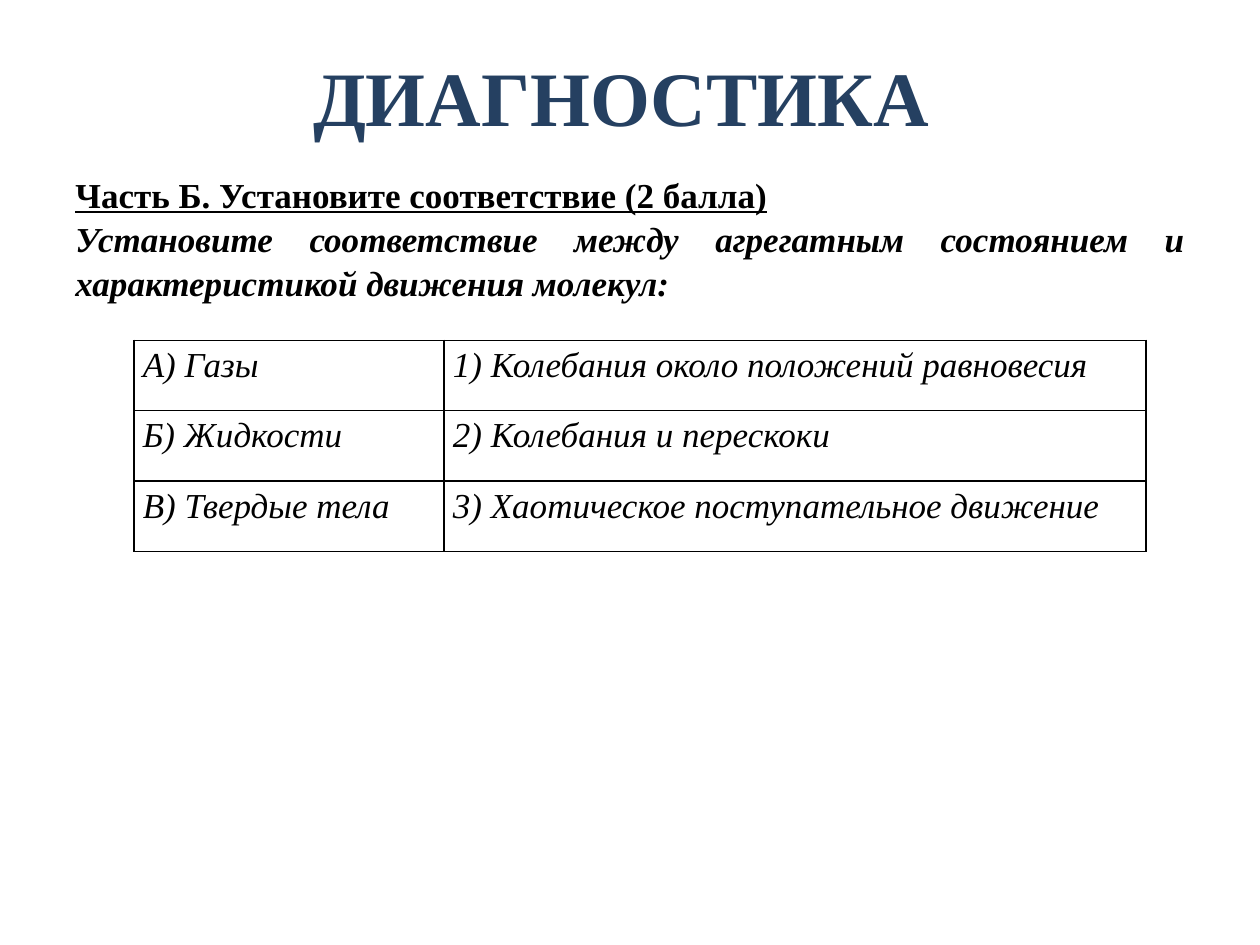
from lxml import etree
from pptx import Presentation
from pptx.dml.color import RGBColor
from pptx.enum import text
from pptx.oxml.ns import qn
from pptx.util import Cm, Pt

TITLE = "ДИАГНОСТИКА"
TASK = "Часть Б. Установите соответствие (2 балла)"
QUESTION = ("Установите соответствие между агрегатным состоянием "
            "и характеристикой движения молекул:")
MATCHES = [
    ("А) Газы", "1) Колебания около положений равновесия"),
    ("Б) Жидкости", "2) Колебания и перескоки"),
    ("В) Твердые тела", "3) Хаотическое поступательное движение"),
]
COLUMN_WIDTHS = (Cm(6.25), Cm(14.15))
ROW_HEIGHT = Cm(1.42)

THEME = {
    "font": "Times New Roman",
    "title": "254061",
    "ink": "000000",
    "title_size": 44,
    "text_size": 20,
    "border": Pt(1),
}


def write(paragraph, words, size=THEME["text_size"], color=THEME["ink"],
          bold=False, italic=False, underline=False, align=None, spacing=None):
    run = paragraph.add_run()
    run.text = words
    font = run.font
    font.name, font.size = THEME["font"], Pt(size)
    font.bold, font.italic, font.underline = bold, italic, underline
    font.color.rgb = RGBColor.from_string(color)
    paragraph.alignment = align
    paragraph.line_spacing = spacing


def add_borders(cell):
    """Draw all four sides; borders must precede the fill in the cell XML."""
    properties = cell._tc.get_or_add_tcPr()
    for position, side in enumerate(("a:lnL", "a:lnR", "a:lnT", "a:lnB")):
        line = etree.Element(qn(side), w=str(THEME["border"]))
        fill = etree.SubElement(line, qn("a:solidFill"))
        etree.SubElement(fill, qn("a:srgbClr"), val=THEME["ink"])
        properties.insert(position, line)


def add_title(slide):
    title = slide.shapes.title
    title.left, title.top, title.width, title.height = Cm(1.1), Cm(0.33), Cm(22.86), Cm(3.18)
    title.text_frame.vertical_anchor = text.MSO_ANCHOR.MIDDLE
    write(title.text_frame.paragraphs[0], TITLE, size=THEME["title_size"],
          color=THEME["title"], bold=True, align=text.PP_ALIGN.CENTER)


def add_task(slide):
    frame = slide.shapes.add_textbox(Cm(1.27), Cm(3.33), Cm(22.86), Cm(13.69)).text_frame
    frame.word_wrap = True
    body = {"bold": True, "align": text.PP_ALIGN.JUSTIFY, "spacing": 1.05}
    write(frame.paragraphs[0], TASK, underline=True, **body)
    write(frame.add_paragraph(), QUESTION, italic=True, **body)


def add_matches(slide):
    table = slide.shapes.add_table(
        len(MATCHES), len(COLUMN_WIDTHS), Cm(2.7), Cm(6.86),
        sum(COLUMN_WIDTHS), ROW_HEIGHT * len(MATCHES)).table
    table.first_row = table.horz_banding = False
    for column, width in zip(table.columns, COLUMN_WIDTHS):
        column.width = width
    for row, match in enumerate(MATCHES):
        table.rows[row].height = ROW_HEIGHT
        for column, words in enumerate(match):
            cell = table.cell(row, column)
            cell.margin_left = cell.margin_right = Cm(0.18)
            cell.margin_top = cell.margin_bottom = 0
            cell.fill.background()
            add_borders(cell)
            write(cell.text_frame.paragraphs[0], words, italic=True, spacing=1.15)


def main():
    deck = Presentation()
    deck.slide_width, deck.slide_height = Cm(25.4), Cm(19.05)
    slide = deck.slides.add_slide(deck.slide_layouts.get_by_name("Title Only"))
    add_title(slide)
    add_task(slide)
    add_matches(slide)
    deck.save("out.pptx")


if __name__ == "__main__":
    main()
